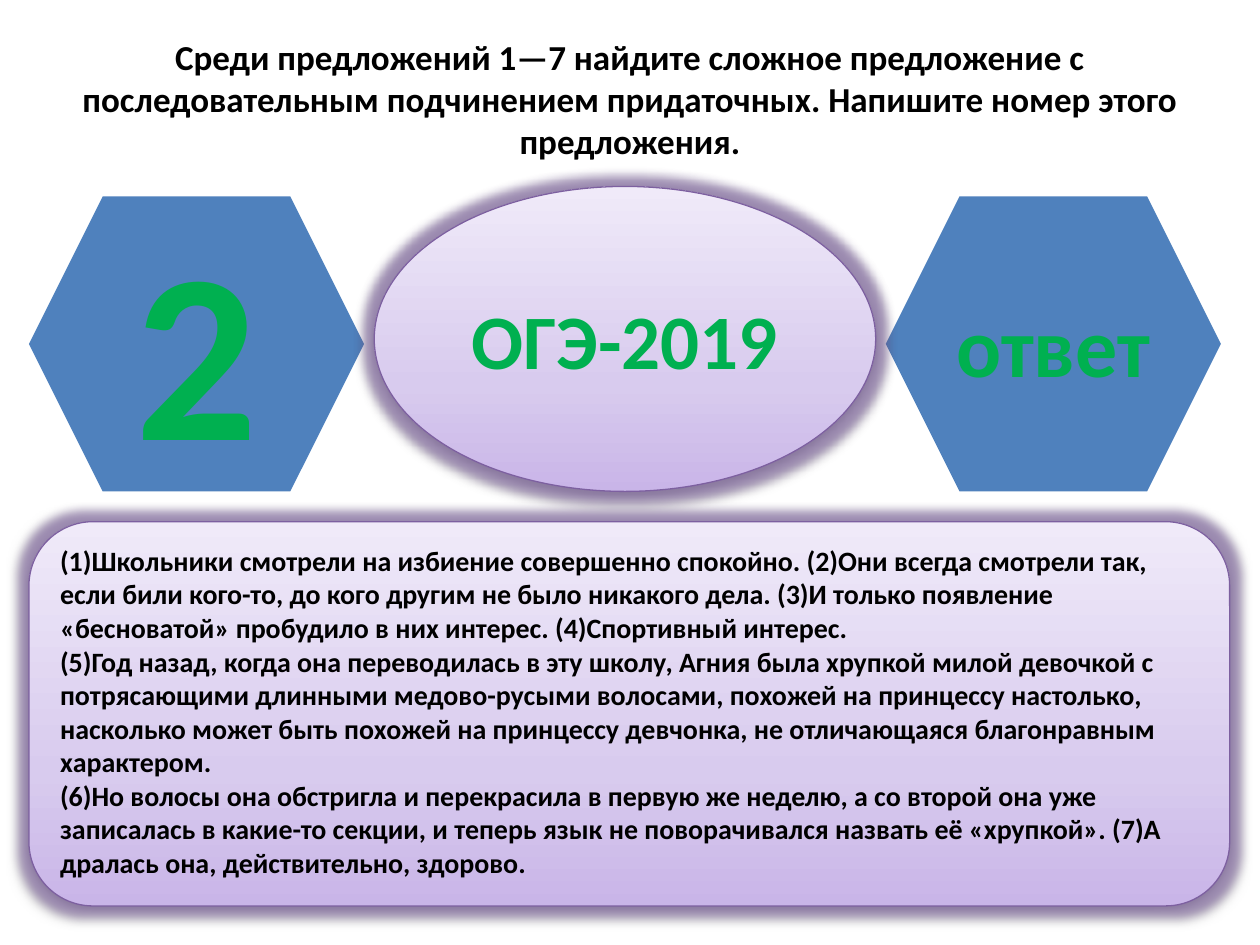
from dataclasses import dataclass

from lxml import etree
from pptx import Presentation
from pptx.dml.color import RGBColor
from pptx.enum.shapes import MSO_SHAPE
from pptx.enum.text import MSO_ANCHOR, MSO_AUTO_SIZE, PP_ALIGN
from pptx.oxml.ns import nsdecls, qn
from pptx.util import Inches, Pt

HEXAGON = MSO_SHAPE.HEXAGON
ELLIPSE = MSO_SHAPE.OVAL
CARD = MSO_SHAPE.FLOWCHART_ALTERNATE_PROCESS
TOP, MIDDLE = MSO_ANCHOR.TOP, MSO_ANCHOR.MIDDLE
LEFT, CENTER = PP_ALIGN.LEFT, PP_ALIGN.CENTER
NO_FIT = MSO_AUTO_SIZE.NONE

TITLE_ONLY = 5
COLUMNS, ROWS = 100, 75

QUESTION = (
    "Среди предложений 1—7 найдите сложное предложение с последовательным "
    "подчинением придаточных. Напишите номер этого предложения."
)
PASSAGE = [
    "(1)Школьники смотрели на избиение совершенно спокойно. (2)Они всегда смотрели так, "
    "если били кого-то, до кого другим не было никакого дела. (3)И только появление "
    "«бесноватой» пробудило в них интерес. (4)Спортивный интерес.",
    "(5)Год назад, когда она переводилась в эту школу, Агния была хрупкой милой девочкой с "
    "потрясающими длинными медово-русыми волосами, похожей на принцессу настолько, "
    "насколько может быть похожей на принцессу девчонка, не отличающаяся благонравным "
    "характером.",
    "(6)Но волосы она обстригла и перекрасила в первую же неделю, а со второй она уже "
    "записалась в какие-то секции, и теперь язык не поворачивался назвать её «хрупкой». "
    "(7)А дралась она, действительно, здорово.",
]


@dataclass(frozen=True)
class Theme:
    font: str = "Calibri"
    ink: str = "000000"
    accent: str = "00B050"
    hexagon: str = "4F81BD"
    outline: str = "7D60A0"
    glow: str = "8064A2"
    gradient: tuple = ((0, "C9B5E8"), (35, "D8CBEE"), (100, "F0EAF9"))
    question_size: int = 20
    passage_size: int = 16
    number_size: int = 138
    answer_size: int = 48
    exam_size: int = 44


class SlideBuilder:
    def __init__(self, deck, theme):
        self.deck = deck
        self.theme = theme
        self.slide = deck.slides.add_slide(deck.slide_layouts[TITLE_ONLY])

    def place(self, column, row, columns, rows):
        """Turn grid units into left, top, width and height."""
        unit_x = self.deck.slide_width / COLUMNS
        unit_y = self.deck.slide_height / ROWS
        return [
            round(length)
            for length in (column * unit_x, row * unit_y, columns * unit_x, rows * unit_y)
        ]

    def add_text(self, shape, paragraphs, size, color, align=CENTER, anchor=MIDDLE):
        frame = shape.text_frame
        frame.word_wrap = True
        frame.auto_size = NO_FIT
        frame.vertical_anchor = anchor
        for index, text in enumerate(paragraphs):
            para = frame.add_paragraph() if index else frame.paragraphs[0]
            para.alignment = align
            span = para.add_run()
            span.text = text
            span.font.name = self.theme.font
            span.font.size = Pt(size)
            span.font.bold = True
            span.font.color.rgb = RGBColor.from_string(color)

    def title(self, text, grid):
        title = self.slide.shapes.title
        title.left, title.top, title.width, title.height = self.place(*grid)
        self.add_text(title, [text], self.theme.question_size, self.theme.ink, anchor=TOP)

    def shape(self, kind, grid):
        shape = self.slide.shapes.add_shape(kind, *self.place(*grid))
        shape.shadow.inherit = False
        return shape

    def hexagon(self, text, size, grid):
        shape = self.shape(HEXAGON, grid)
        shape.fill.solid()
        shape.fill.fore_color.rgb = RGBColor.from_string(self.theme.hexagon)
        shape.line.fill.background()
        self.add_text(shape, [text], size, self.theme.accent)

    def glowing(self, kind, grid):
        """Add a shape with the lilac gradient, a glow and a soft shadow."""
        shape = self.shape(kind, grid)
        shape.line.color.rgb = RGBColor.from_string(self.theme.outline)
        shape.line.width = Pt(0.75)
        shape.fill.gradient()
        shape.fill.gradient_angle = 90
        properties = shape.element.spPr
        stops = properties.find(qn("a:gradFill")).find(qn("a:gsLst"))
        for stop in list(stops):
            stops.remove(stop)
        for percent, color in self.theme.gradient:
            stop = etree.SubElement(stops, qn("a:gs"), pos=str(percent * 1000))
            etree.SubElement(stop, qn("a:srgbClr"), val=color)
        effects = properties.find(qn("a:effectLst"))
        for effect in (
            f'<a:glow {nsdecls("a")} rad="{Pt(11)}"><a:srgbClr val="{self.theme.glow}">'
            '<a:alpha val="60000"/></a:srgbClr></a:glow>',
            f'<a:outerShdw {nsdecls("a")} blurRad="{Pt(3.1)}" dist="{Pt(1.6)}" dir="5400000" '
            'rotWithShape="0"><a:srgbClr val="000000"><a:alpha val="38000"/></a:srgbClr>'
            "</a:outerShdw>",
        ):
            effects.append(etree.fromstring(effect))
        return shape

    def exam(self, text, grid):
        ellipse = self.glowing(ELLIPSE, grid)
        self.add_text(ellipse, [text], self.theme.exam_size, self.theme.accent)

    def passage(self, paragraphs, grid):
        card = self.glowing(CARD, grid)
        card.text_frame.margin_bottom = Inches(0.09)
        self.add_text(card, paragraphs, self.theme.passage_size, self.theme.ink, align=LEFT)


def main():
    deck = Presentation()
    deck.slide_width, deck.slide_height = Inches(10), Inches(7.5)
    theme = Theme()
    page = SlideBuilder(deck, theme)
    page.title(QUESTION, (3.1, 2.3, 93.8, 17.8))
    for text, size, column in (
        ("2", theme.number_size, 2.3),
        ("ответ", theme.answer_size, 70.3),
    ):
        page.hexagon(text, size, (column, 15.6, 26.6, 23.4))
    page.exam("ОГЭ-2019", (29.7, 14.8, 39.8, 24.2))
    page.passage(PASSAGE, (2.3, 41.4, 95.3, 30.5))
    deck.save("out.pptx")


if __name__ == "__main__":
    main()
